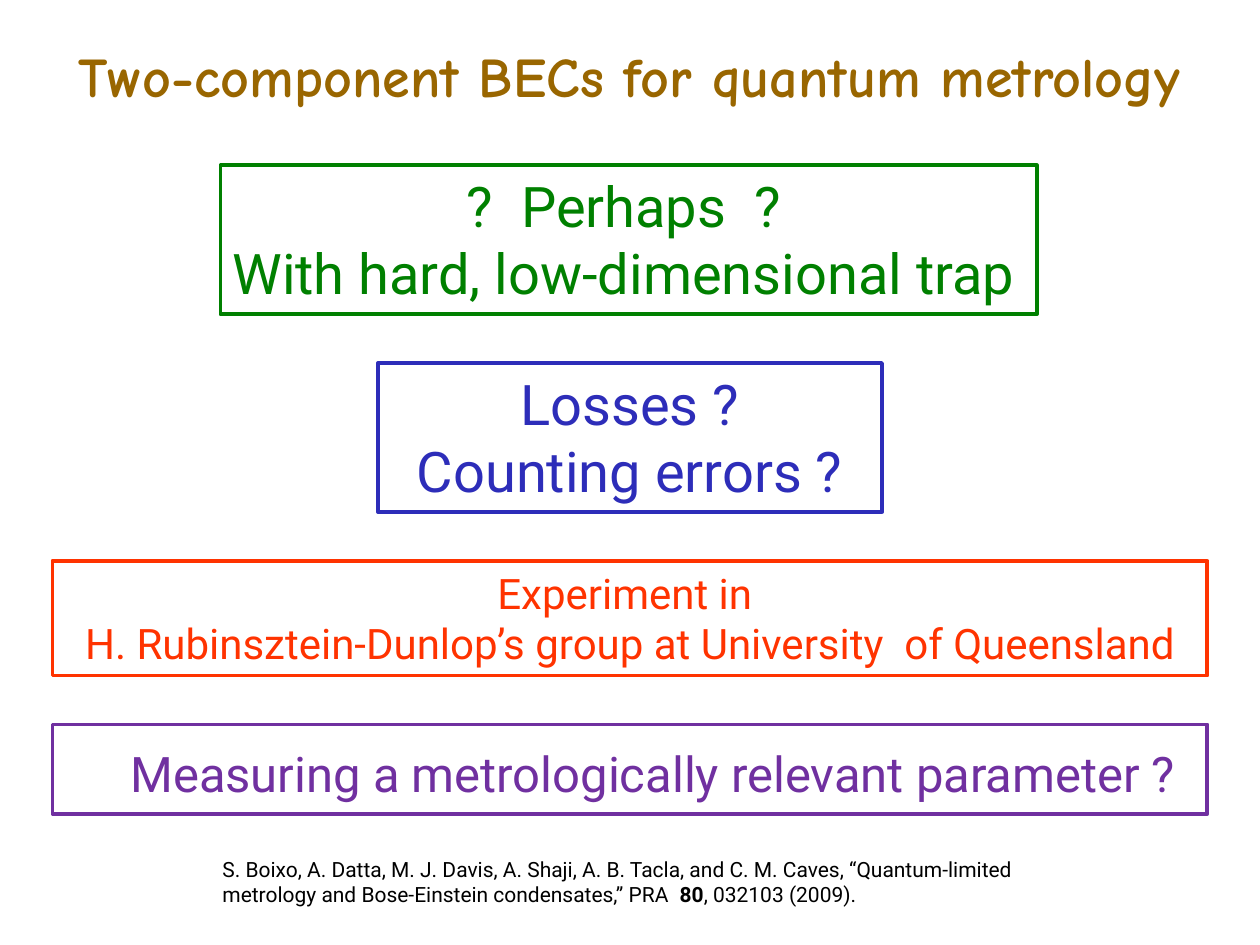
from pptx import Presentation
from pptx.dml.color import RGBColor
from pptx.enum.shapes import MSO_SHAPE
from pptx.enum.text import MSO_ANCHOR, MSO_AUTO_SIZE, PP_ALIGN
from pptx.util import Pt

BROWN = RGBColor(0x99, 0x66, 0x00)
GREEN = RGBColor(0x00, 0x80, 0x00)
BLUE = RGBColor(0x2D, 0x2D, 0xB9)
RED = RGBColor(0xFF, 0x33, 0x00)
PURPLE = RGBColor(0x70, 0x30, 0xA0)
BLACK = RGBColor(0x00, 0x00, 0x00)

HEADING_FONT = "Comic Neue"
BODY_FONT = "Roboto"


def to_points(box):
    """Turn a box of plain numbers into lengths."""
    return [Pt(length) for length in box]


def add_run(paragraph, words, size, color, font=BODY_FONT, bold=False):
    """Append one formatted run to a paragraph."""
    run = paragraph.add_run()
    run.text = words
    run.font.name = font
    run.font.size = Pt(size)
    run.font.bold = bold
    run.font.color.rgb = color


def add_title(slide, box, words):
    """Place the centred heading."""
    title = slide.shapes.add_textbox(*to_points(box)).text_frame
    title.word_wrap = True
    title.auto_size = MSO_AUTO_SIZE.SHAPE_TO_FIT_TEXT
    heading = title.paragraphs[0]
    heading.alignment = PP_ALIGN.CENTER
    add_run(heading, words, 32, BROWN, HEADING_FONT, bold=True)


def add_question(slide, box, lines, size, color, wrap=True, insets=(7.2, 3.6, 7.2, 3.6)):
    """Place an outlined box of centred lines."""
    panel = slide.shapes.add_shape(MSO_SHAPE.RECTANGLE, *to_points(box))
    panel.shadow.inherit = False
    panel.fill.background()
    panel.line.color.rgb = color
    panel.line.width = Pt(2.25)
    content = panel.text_frame
    content.word_wrap = wrap
    content.auto_size = MSO_AUTO_SIZE.SHAPE_TO_FIT_TEXT
    content.vertical_anchor = MSO_ANCHOR.TOP
    (content.margin_left, content.margin_top,
     content.margin_right, content.margin_bottom) = to_points(insets)
    for index, words in enumerate(lines):
        line = content.add_paragraph() if index else content.paragraphs[0]
        line.alignment = PP_ALIGN.CENTER
        add_run(line, words, size, color)


def add_citation(slide, box, pieces):
    """Place the reference from pairs of words and boldness."""
    citation = slide.shapes.add_textbox(*to_points(box)).text_frame
    citation.word_wrap = True
    citation.auto_size = MSO_AUTO_SIZE.SHAPE_TO_FIT_TEXT
    for words, bold in pieces:
        add_run(citation.paragraphs[0], words, 12, BLACK, bold=bold)


def main():
    """Build the slide and save it."""
    deck = Presentation()
    deck.slide_width, deck.slide_height = Pt(720), Pt(540)
    slide = deck.slides.add_slide(deck.slide_layouts[6])

    add_title(slide, (0, 20, 720, 46), "Two-component BECs for quantum metrology")
    add_question(slide, (126, 94.5, 466.5, 85),
                 ["?  Perhaps  ?", "With hard, low-dimensional trap"],
                 32, GREEN, wrap=False, insets=(1, 3.6, 6.5, 3.6))
    add_question(slide, (216, 207.5, 288, 85),
                 ["Losses ?", "Counting errors ?"], 32, BLUE)
    add_question(slide, (30, 320.5, 660, 65.5),
                 ["Experiment in ",
                  "H. Rubinsztein-Dunlop’s group at University  of Queensland"],
                 24, RED)
    add_question(slide, (30, 414, 660, 51),
                 ["Measuring a metrologically relevant parameter ?"],
                 28, PURPLE, insets=(33, 11, 7.2, 7.2))
    add_citation(slide, (120, 486, 486, 36), [
        ("S. Boixo, A. Datta, M. J. Davis, A. Shaji, A. B. Tacla, and C. M. Caves, "
         "“Quantum-limited metrology and Bose-Einstein condensates,” PRA  ", False),
        ("80", True),
        (", 032103 (2009).", False),
    ])

    deck.save("out.pptx")


if __name__ == "__main__":
    main()
